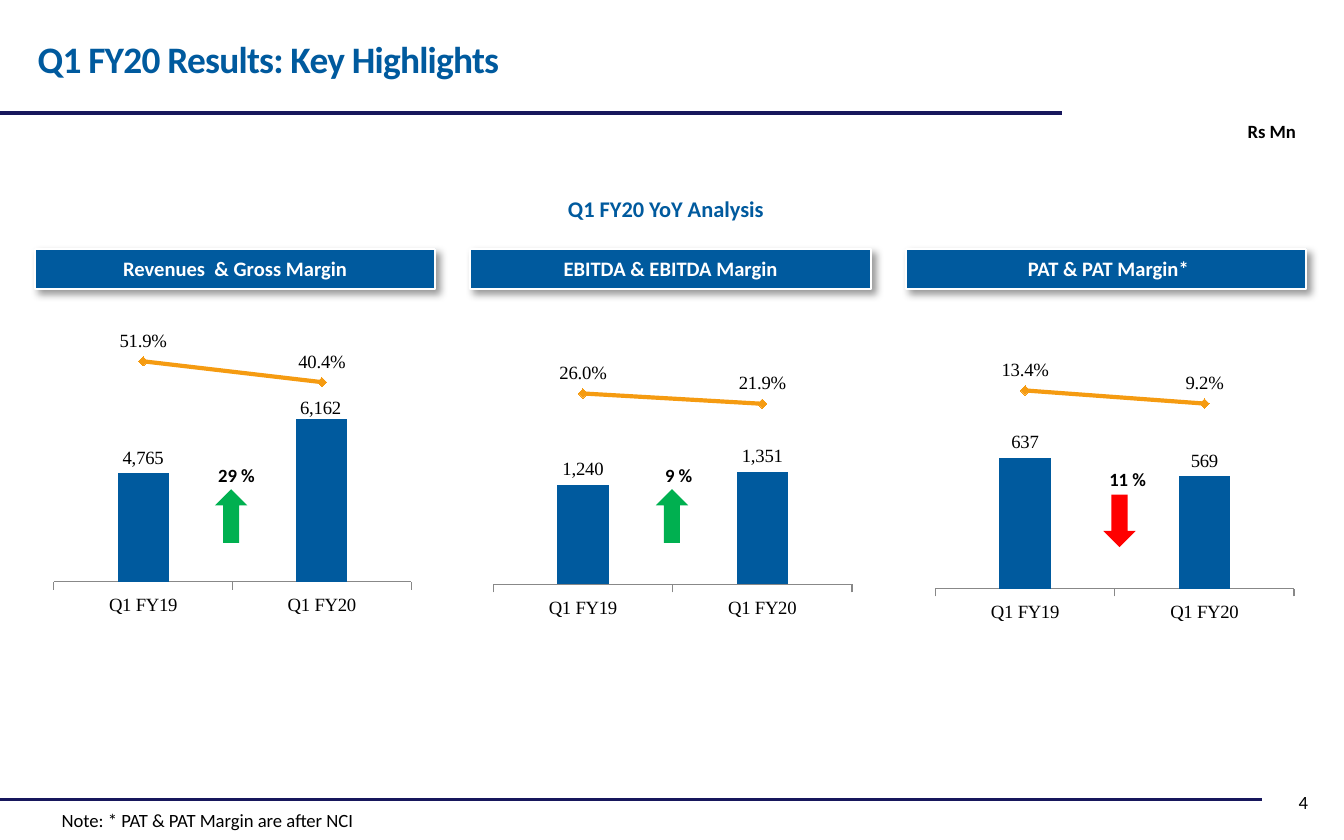
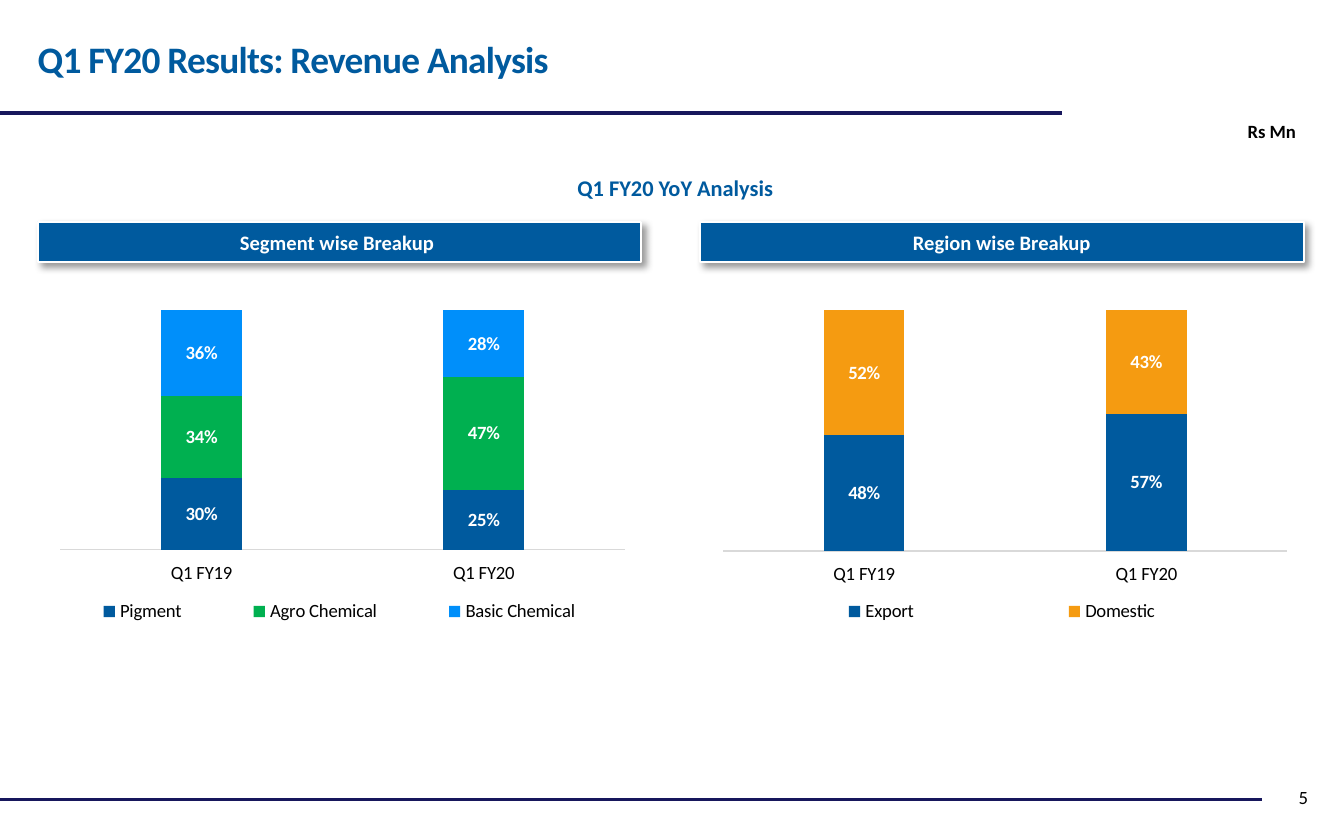
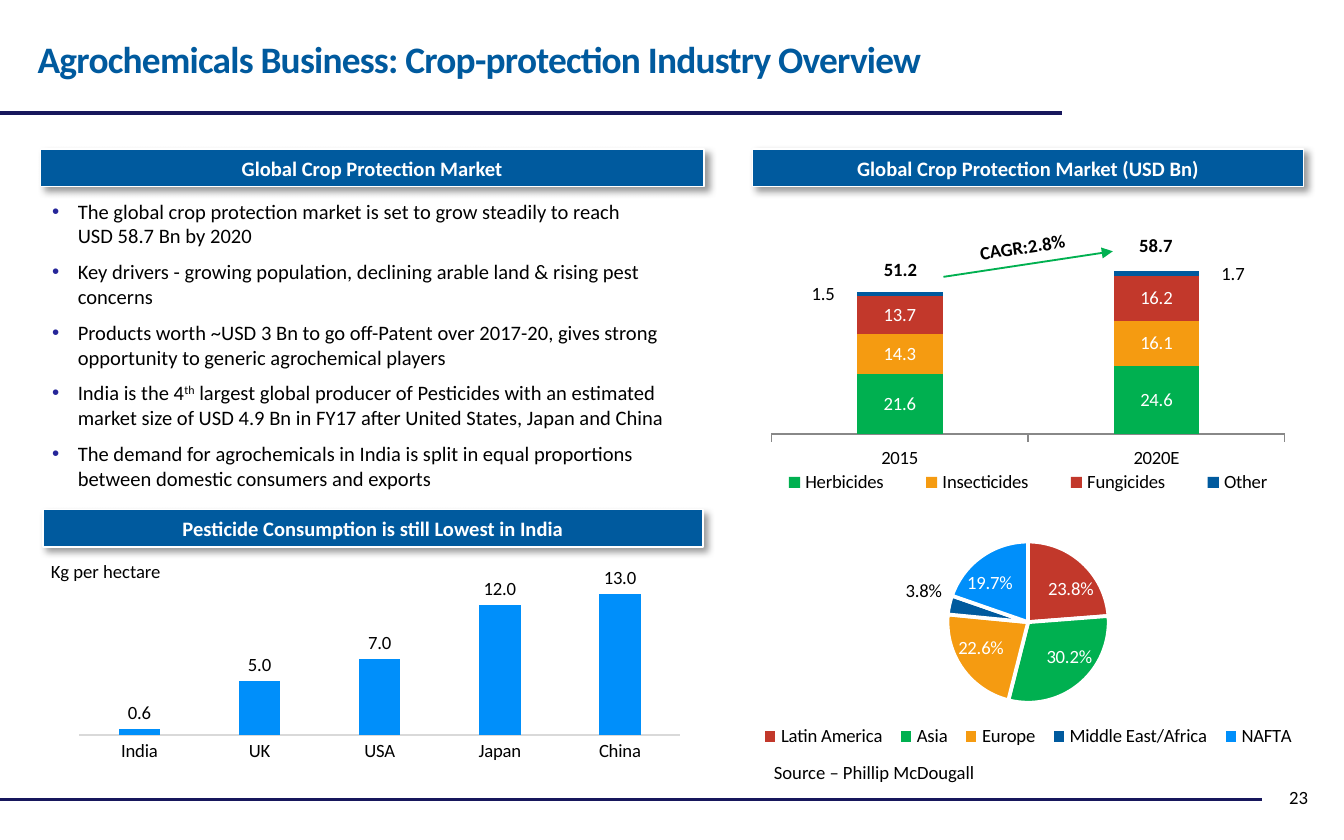
from pptx import Presentation
from pptx.chart.data import CategoryChartData
from pptx.dml.color import RGBColor
from pptx.enum.chart import (XL_CHART_TYPE, XL_LABEL_POSITION, XL_LEGEND_POSITION,
                             XL_MARKER_STYLE, XL_TICK_LABEL_POSITION, XL_TICK_MARK)
from pptx.enum.shapes import MSO_CONNECTOR, MSO_SHAPE
from pptx.enum.text import MSO_ANCHOR, PP_ALIGN
from pptx.oxml import parse_xml
from pptx.oxml.ns import nsdecls, qn
from pptx.util import Emu, Pt

PX = 9144
SANS, SERIF = "Calibri", "Times New Roman"

BLACK = RGBColor(0x00, 0x00, 0x00)
WHITE = RGBColor(0xFF, 0xFF, 0xFF)
NAVY = RGBColor(0x17, 0x17, 0x5C)
BLUE = RGBColor(0x00, 0x5A, 0x9E)
SKY = RGBColor(0x00, 0x8F, 0xFA)
GREEN = RGBColor(0x00, 0xB0, 0x50)
ORANGE = RGBColor(0xF5, 0x9B, 0x11)
BRICK = RGBColor(0xC2, 0x38, 0x2B)
RED = RGBColor(0xFF, 0x00, 0x00)
INDIGO = RGBColor(0x26, 0x26, 0x99)
GREY = RGBColor(0x88, 0x88, 0x88)
PALE = RGBColor(0xD9, 0xD9, 0xD9)

LEFT, CENTER, RIGHT = PP_ALIGN.LEFT, PP_ALIGN.CENTER, PP_ALIGN.RIGHT
TOP, MIDDLE = MSO_ANCHOR.TOP, MSO_ANCHOR.MIDDLE
RECTANGLE, STRAIGHT = MSO_SHAPE.RECTANGLE, MSO_CONNECTOR.STRAIGHT
UP_ARROW, DOWN_ARROW = MSO_SHAPE.UP_ARROW, MSO_SHAPE.DOWN_ARROW
CLUSTERED, STACKED = XL_CHART_TYPE.COLUMN_CLUSTERED, XL_CHART_TYPE.COLUMN_STACKED
STACKED_100, PIE = XL_CHART_TYPE.COLUMN_STACKED_100, XL_CHART_TYPE.PIE
OUTSIDE_END, CENTERED = XL_LABEL_POSITION.OUTSIDE_END, XL_LABEL_POSITION.CENTER
BEST_FIT, ABOVE = XL_LABEL_POSITION.BEST_FIT, XL_LABEL_POSITION.ABOVE
LEGEND_BOTTOM, DIAMOND = XL_LEGEND_POSITION.BOTTOM, XL_MARKER_STYLE.DIAMOND
TICK_OUT, TICK_NONE = XL_TICK_MARK.OUTSIDE, XL_TICK_MARK.NONE
LABELS_LOW, LABELS_NONE = XL_TICK_LABEL_POSITION.LOW, XL_TICK_LABEL_POSITION.NONE
LABELS_NEXT = XL_TICK_LABEL_POSITION.NEXT_TO_AXIS

EDGES = '<c:xMode val="edge"/><c:yMode val="edge"/>'
LINE_CHART = f"""<c:lineChart {nsdecls("c")}><c:grouping val="standard"/>
<c:varyColors val="0"/><c:marker val="1"/><c:axId val="3001"/><c:axId val="3002"/></c:lineChart>"""
LINE_CATEGORIES = f"""<c:catAx {nsdecls("c")}><c:axId val="3001"/>
<c:scaling><c:orientation val="minMax"/></c:scaling><c:delete val="1"/><c:axPos val="b"/>
<c:majorTickMark val="none"/><c:minorTickMark val="none"/><c:tickLblPos val="nextTo"/>
<c:crossAx val="3002"/><c:crosses val="autoZero"/></c:catAx>"""
LINE_VALUES = """<c:valAx {ns}><c:axId val="3002"/><c:scaling><c:orientation val="minMax"/>
<c:max val="{high}"/><c:min val="{low}"/></c:scaling><c:delete val="0"/><c:axPos val="r"/>
<c:majorTickMark val="none"/><c:minorTickMark val="none"/><c:tickLblPos val="none"/>
<c:spPr><a:ln><a:noFill/></a:ln></c:spPr><c:crossAx val="3001"/><c:crosses val="max"/></c:valAx>"""
NO_LEADERS = f"""<c:extLst {nsdecls("c")}><c:ext uri="{{CE6537A1-D6FC-4f65-9D91-7224C49458BB}}"
xmlns:c15="http://schemas.microsoft.com/office/drawing/2012/chart">
<c15:showLeaderLines val="0"/></c:ext></c:extLst>"""


def emu(lengths):
    return [Emu(length * PX) for length in lengths]


def write(frame, text, size=10, bold=False, color=BLACK, align=LEFT, anchor=TOP,
          tracking=None, bullet=None, after=None):
    """Paragraphs end at a newline, lines at a vertical tab; ^...^ is superscript."""
    frame.word_wrap = True
    frame.vertical_anchor = anchor
    for number, content in enumerate(text.split("\n")):
        para = frame.add_paragraph() if number else frame.paragraphs[0]
        para.alignment = align
        if after:
            para.space_after = Pt(after)
        if bullet:
            properties = para._p.get_or_add_pPr()
            properties.set("marL", str(19 * PX))
            properties.set("indent", str(-19 * PX))
            for item in (f'<a:buClr {nsdecls("a")}><a:srgbClr val="{bullet}"/></a:buClr>',
                         f'<a:buFont {nsdecls("a")} typeface="Arial"/>',
                         f'<a:buChar {nsdecls("a")} char="•"/>'):
                properties.append(parse_xml(item))
        for row, line in enumerate(content.split("\v")):
            if row:
                para.add_line_break()
            for part, words in enumerate(line.split("^")):
                span = para.add_run()
                span.text = words
                span.font.name, span.font.size = SANS, Pt(size)
                span.font.bold, span.font.color.rgb = bold, color
                if tracking:
                    span._r.get_or_add_rPr().set("spc", str(tracking))
                if part % 2:
                    span._r.get_or_add_rPr().set("baseline", "30000")


def set_layout(parent, index, mode, **fractions):
    items = "".join(f'<c:{key} val="{value:.4f}"/>' for key, value in fractions.items())
    for layout in parent.findall(qn("c:layout")):
        parent.remove(layout)
    parent.insert(index, parse_xml(
        f'<c:layout {nsdecls("c")}><c:manualLayout>{mode}{items}</c:manualLayout></c:layout>'))


class Deck:
    def __init__(self):
        self.deck = Presentation()
        self.deck.slide_width, self.deck.slide_height = emu((1000, 625))
        self.page = None

    def start(self, title, number, number_top=572):
        self.page = self.deck.slides.add_slide(self.deck.slide_layouts[5])
        self.line((-2, 595), (939, 595))
        self.line((-1, 84), (790, 84))
        box = self.page.shapes.title
        box.left, box.top, box.width, box.height = emu((18, 22, 835, 44))
        write(box.text_frame, title, size=20, bold=True, color=BLUE, tracking=-43)
        self.text((775, number_top, 208, 42), str(number), align=RIGHT, anchor=MIDDLE)

    def text(self, at, text, rotation=0, **style):
        box = self.page.shapes.add_textbox(*emu(at))
        box.rotation = rotation
        write(box.text_frame, text, **style)

    def unit(self):
        self.text((785, 84, 189, 27), "Rs Mn", bold=True, align=RIGHT)

    def heading(self, left, top):
        self.text((left, top, 291, 30), "Q1 FY20 YoY Analysis", size=12, bold=True,
                  color=BLUE, align=CENTER)

    def line(self, start, end, color=NAVY, width=1.75, arrow=False):
        connector = self.page.shapes.add_connector(STRAIGHT, *emu(start + end))
        connector.line.color.rgb, connector.line.width = color, Pt(width)
        if arrow:
            connector.line._get_or_add_ln().append(
                parse_xml(f'<a:tailEnd {nsdecls("a")} type="triangle"/>'))
        connector._element.spPr.append(parse_xml(f'<a:effectLst {nsdecls("a")}/>'))

    def shape(self, kind, at, color):
        shape = self.page.shapes.add_shape(kind, *emu(at))
        shape.shadow.inherit = False
        shape.fill.solid()
        shape.fill.fore_color.rgb = color
        shape.line.fill.background()
        return shape

    def banner(self, at, text, border=1):
        shape = self.shape(RECTANGLE, at, BLUE)
        shape.line.color.rgb, shape.line.width = WHITE, Pt(border)
        shape._element.spPr.find(qn("a:effectLst")).append(parse_xml(
            f'<a:outerShdw {nsdecls("a")} blurRad="50800" dist="38100" dir="2700000" '
            'algn="tl" rotWithShape="0"><a:srgbClr val="000000"><a:alpha val="40000"/>'
            '</a:srgbClr></a:outerShdw>'))
        write(shape.text_frame, text, size=11, bold=True, color=WHITE,
              align=CENTER, anchor=MIDDLE)

    def chart(self, kind, at, plot, categories, series, font=SANS, legend_top=None):
        data = CategoryChartData()
        data.categories = categories
        for name, values in series:
            data.add_series(name, values)
        chart = self.page.shapes.add_chart(kind, *emu(at), data).chart
        chart.has_title = False
        chart.font.name, chart.font.size, chart.font.color.rgb = font, Pt(10), BLACK
        chart.has_legend = legend_top is not None
        if chart.has_legend:
            chart.legend.position = LEGEND_BOTTOM
            chart.legend.include_in_layout = False
            chart.legend.font.name, chart.legend.font.size = font, Pt(10)
            set_layout(chart.element.find(".//" + qn("c:legend")), 1, EDGES,
                       x=0, y=legend_top / at[3], w=1, h=20 / at[3])
        chart.plots[0].vary_by_categories = kind == PIE
        left, top, width, height = plot
        set_layout(chart.element.find(".//" + qn("c:plotArea")), 0,
                   '<c:layoutTarget val="inner"/>' + EDGES,
                   x=left / at[2], y=top / at[3], w=width / at[2], h=height / at[3])
        return chart

    def axes(self, chart, low, high, gap, overlap=0, color=PALE, tick=TICK_NONE,
             hidden=False, labels=LABELS_LOW):
        chart.plots[0].gap_width, chart.plots[0].overlap = gap, overlap
        category, value = chart.category_axis, chart.value_axis
        category.major_tick_mark, category.tick_label_position = tick, labels
        category.has_major_gridlines = value.has_major_gridlines = False
        category.format.line.color.rgb, category.format.line.width = color, Pt(0.75)
        value.minimum_scale, value.maximum_scale = low, high
        value.major_tick_mark, value.tick_label_position = TICK_NONE, LABELS_NONE
        value.format.line.fill.background()
        value.visible = not hidden

    def labels(self, series, fmt, color=BLACK, bold=False, position=None, font=SANS):
        labels = series.data_labels
        labels.show_value = True
        labels.number_format, labels.number_format_is_linked = fmt, False
        labels.font.name, labels.font.size = font, Pt(10)
        labels.font.bold, labels.font.color.rgb = bold, color
        if position is not None:
            labels.position = position
        element = series._element.find(qn("c:dLbls"))
        for leaders in element.findall(qn("c:showLeaderLines")):
            element.remove(leaders)
        element.append(parse_xml(f'<c:showLeaderLines {nsdecls("c")} val="0"/>'))
        element.append(parse_xml(NO_LEADERS))

    def columns(self, chart, colors, fmt, **style):
        for series, color in zip(chart.plots[0].series, colors):
            series.invert_if_negative = False
            series.format.fill.solid()
            series.format.fill.fore_color.rgb = color
            self.labels(series, fmt, **style)

    def move_label(self, series, index, at, shift, fmt, position=None, font=SANS):
        label = series.points[index].data_label
        label.font.name, label.font.size, label.font.color.rgb = font, Pt(10), BLACK
        if position is not None:
            label.position = position
        element = series._element.findall(".//" + qn("c:dLbl"))[-1]
        set_layout(element, 1, "", x=shift[0] / at[2], y=shift[1] / at[3])
        element.insert(2, parse_xml(
            f'<c:numFmt {nsdecls("c")} formatCode="{fmt}" sourceLinked="0"/>'))

    def columns_with_line(self, at, plot, amounts, margins, scale, line_scale):
        chart = self.chart(CLUSTERED, at, plot, ("Q1 FY19", "Q1 FY20"),
                           (("Series 1", amounts), ("Series 2", margins)), font=SERIF)
        self.axes(chart, *scale, gap=250, color=GREY, tick=TICK_OUT)
        area = chart.element.find(".//" + qn("c:plotArea"))
        bars = area.find(qn("c:barChart"))
        moved = bars.findall(qn("c:ser"))[1]
        for flag in moved.findall(qn("c:invertIfNegative")):
            moved.remove(flag)
        lines = parse_xml(LINE_CHART)
        lines.find(qn("c:marker")).addprevious(moved)
        bars.addnext(lines)
        area.append(parse_xml(LINE_CATEGORIES))
        area.append(parse_xml(LINE_VALUES.format(
            ns=nsdecls("c", "a"), low=line_scale[0], high=line_scale[1])))
        self.columns(chart, (BLUE,), "#,##0", position=OUTSIDE_END, font=SERIF)
        margin = chart.plots[1].series[0]
        margin.smooth = False
        margin.format.line.color.rgb, margin.format.line.width = ORANGE, Pt(2.25)
        margin.marker.style, margin.marker.size = DIAMOND, 5
        margin.marker.format.fill.solid()
        margin.marker.format.fill.fore_color.rgb = ORANGE
        margin.marker.format.line.color.rgb = ORANGE
        self.labels(margin, "0.0%", position=ABOVE, font=SERIF)
        return chart


def highlights(deck):
    deck.start("Q1 FY20 Results: Key Highlights", 4, number_top=576)
    deck.unit()
    for column, caption in enumerate(("Revenues  & Gross Margin", "EBITDA & EBITDA Margin",
                                      " PAT & PAT Margin*")):
        deck.banner((26 + 324 * column, 185, 298, 30), caption)
    revenue_at = (25, 230, 297, 240)
    revenue = deck.columns_with_line(revenue_at, (15, 28, 266, 175), (4765, 6162),
                                     (0.519, 0.404), (2000, 8000), (-0.7, 0.6))
    deck.move_label(revenue.plots[0].series[0], 1, revenue_at, (-1, 4), "#,##0",
                    position=OUTSIDE_END, font=SERIF)
    deck.columns_with_line((352, 230, 298, 240), (15, 46, 267, 159), (1240, 1351),
                           (0.26, 0.219), (400, 2200), (-0.5, 0.35))
    deck.columns_with_line((681, 230, 298, 240), (15, 29, 267, 179), (637, 569),
                           (0.134, 0.092), (150, 1050), (-0.5, 0.27))
    deck.heading(350, 140)
    for kind, arrow_at, color, text_at, change in (
            (UP_ARROW, (160, 364, 24, 40), GREEN, (141, 340), "29 %"),
            (UP_ARROW, (488, 364, 24, 40), GREEN, (470, 340), "9 %"),
            (DOWN_ARROW, (821, 368, 24, 39), RED, (804, 343), "11 %")):
        deck.shape(kind, arrow_at, color)
        deck.text((*text_at, 70, 28), change, bold=True, align=CENTER)
    deck.text((36, 597, 682, 27), "Note: * PAT & PAT Margin are after NCI")


def revenue_analysis(deck):
    deck.start("Q1 FY20 Results: Revenue Analysis", 5)
    deck.unit()
    segments = (("Pigment", (0.3, 0.25)), ("Agro Chemical", (0.34, 0.47)),
                ("Basic Chemical", (0.36, 0.28)))
    regions = (("Export", (0.48, 0.57)), ("Domestic", (0.52, 0.43)))
    for column, (caption, series, colors, height) in enumerate((
            ("Segment wise Breakup ", segments, (BLUE, GREEN, SKY), 178),
            ("Region wise Breakup", regions, (BLUE, ORANGE), 179))):
        left = 28 + 493 * column
        deck.banner((left, 165, 449, 30), caption)
        chart = deck.chart(STACKED_100, (left, 210, 449, 265), (17, 21, 420, height),
                           ("Q1 FY19", "Q1 FY20"), series, legend_top=235)
        deck.axes(chart, 0, 1, gap=250, overlap=100)
        deck.columns(chart, colors, "0%", color=WHITE, bold=True)
    deck.heading(357, 125)


def crop_protection(deck):
    deck.start("Agrochemicals Business: Crop-protection Industry Overview", 23)

    pie_at = (560, 385, 410, 187)
    regions = ("Latin America", "Asia", "Europe", "Middle East/Africa", "NAFTA")
    pie = deck.chart(PIE, pie_at, (0, 18, 410, 120), regions,
                     (("Series 1", (0.238, 0.302, 0.226, 0.038, 0.197)),), legend_top=153)
    share = pie.plots[0].series[0]
    for index, color in enumerate((BRICK, GREEN, ORANGE, BLUE, SKY)):
        part = share.points[index].format
        part.fill.solid()
        part.fill.fore_color.rgb = color
        part.line.color.rgb, part.line.width = WHITE, Pt(2)
    deck.labels(share, "0.0%", color=WHITE, position=BEST_FIT)
    deck.move_label(share, 3, pie_at, (0, -1), "0.0%", position=OUTSIDE_END)
    deck.text((566, 561, 235, 28), "Source – Phillip McDougall")

    market_at = (560, 172, 410, 202)
    market = deck.chart(STACKED, market_at, (14, 27, 382, 124), ("2015", "2020E"),
                        (("Herbicides", (21.6, 24.6)), ("Insecticides", (14.3, 16.1)),
                         ("Fungicides", (13.7, 16.2)), ("Other", (1.5, 1.7))), legend_top=177)
    deck.axes(market, 0, 60, gap=200, overlap=100, color=GREY, tick=TICK_OUT, hidden=True,
              labels=LABELS_NEXT)
    deck.columns(market, (GREEN, ORANGE, BRICK, BLUE), "#,##0.0", color=WHITE,
                 position=CENTERED)
    other = market.plots[0].series[3]
    other.data_labels.font.color.rgb = BLACK
    for index, shift in enumerate((-57, 57)):
        deck.move_label(other, index, market_at, (shift, 0), "#,##0.0", position=CENTERED)

    deck.banner((560, 111, 410, 28), "Global Crop Protection Market (USD Bn)", border=0.75)
    deck.line((702, 206), (828, 187), color=GREEN, width=1, arrow=True)
    deck.text((638, 187, 64, 27), "51.2", bold=True, align=CENTER)
    deck.text((828, 169, 64, 27), "58.7", bold=True, align=CENTER)
    deck.text((719, 170, 87, 27), "CAGR:2.8%", rotation=351.6, bold=True)

    deck.banner((30, 111, 494, 28), "Global Crop Protection Market", border=0.75)
    deck.text((29, 143, 495, 202), "\n".join((
        "The global crop protection market is set to grow steadily to reach\vUSD 58.7 Bn by 2020",
        "Key drivers - growing population, declining arable land & rising pest concerns",
        "Products worth ~USD 3 Bn to go off-Patent over 2017-20, gives strong opportunity "
        "to generic agrochemical players",
        "India is the 4^th^ largest global producer of Pesticides with an estimated market "
        "size of USD 4.9 Bn in FY17 after United States, Japan and China",
        "The demand for agrochemicals in India is split in equal proportions between "
        "domestic consumers and exports")), size=11, bullet=INDIGO, after=6)

    deck.banner((32, 379, 491, 28), "Pesticide Consumption is still Lowest in India", border=0.75)
    pesticide = deck.chart(CLUSTERED, (32, 410, 491, 180), (27, 24, 447, 113),
                           ("India", "UK", "USA", "Japan", "China"),
                           (("Series 1", (0.6, 5, 7, 12, 13)),))
    deck.axes(pesticide, 0, 14, gap=189, overlap=-27, hidden=True, labels=LABELS_NEXT)
    deck.columns(pesticide, (SKY,), "#,##0.0", position=OUTSIDE_END)
    deck.text((28, 412, 159, 27), "Kg per hectare")


def main():
    deck = Deck()
    highlights(deck)
    revenue_analysis(deck)
    crop_protection(deck)
    deck.deck.save("out.pptx")


if __name__ == "__main__":
    main()
